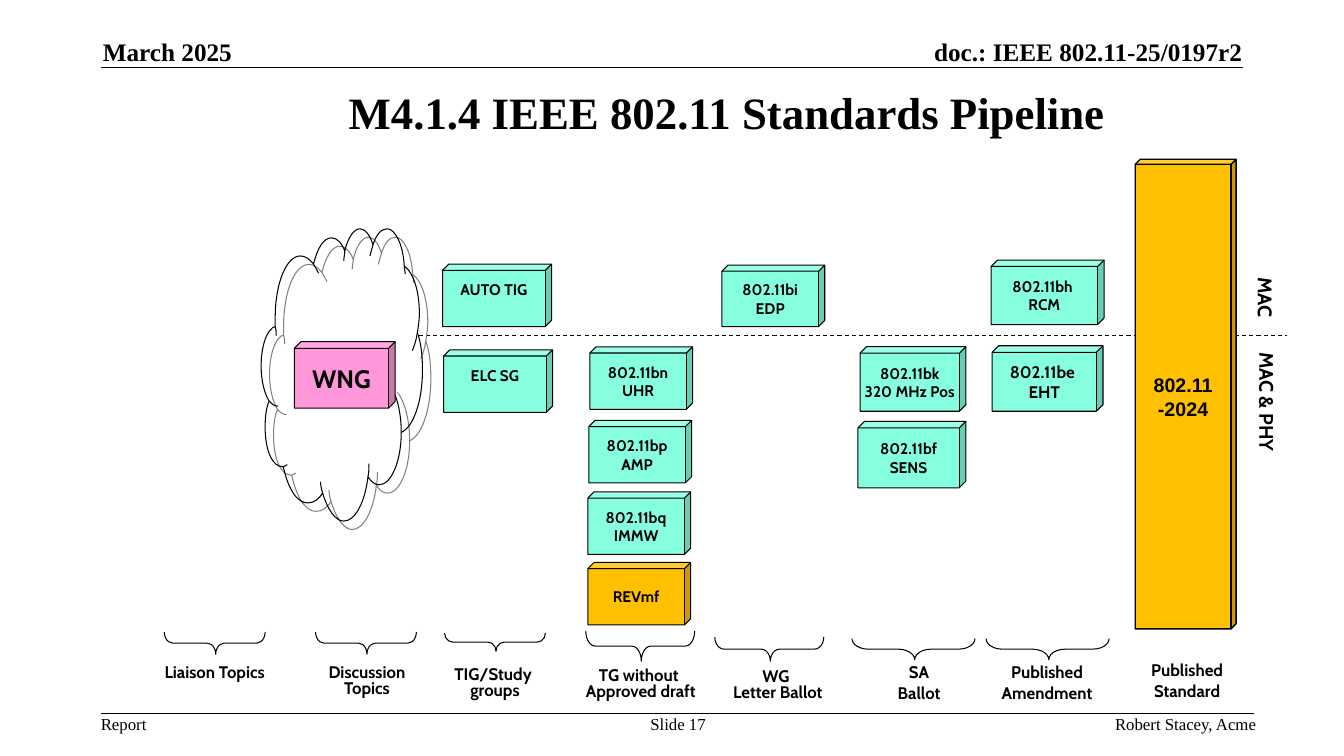
from dataclasses import dataclass

from lxml.etree import SubElement
from pptx import Presentation
from pptx.dml.color import RGBColor
from pptx.enum.dml import MSO_LINE
from pptx.enum.shapes import MSO_CONNECTOR, MSO_SHAPE
from pptx.enum.text import MSO_ANCHOR as Anchor, MSO_AUTO_SIZE, PP_ALIGN as Align
from pptx.oxml.ns import qn
from pptx.util import Inches, Pt


@dataclass(frozen=True)
class Theme:
    ink: RGBColor = RGBColor(0, 0, 0)
    paper: RGBColor = RGBColor(0xFF, 0xFF, 0xFF)
    shade: str = "808080"
    group: RGBColor = RGBColor(0x85, 0xFF, 0xE0)
    standard: RGBColor = RGBColor(0xFF, 0xC0, 0x00)
    discussion: RGBColor = RGBColor(0xFF, 0x97, 0xDA)
    page_font: str = "Times New Roman"
    diagram_font: str = "Cabin"
    standard_font: str = "Arial"
    title: int = 32
    header: int = 18
    footer: int = 12
    label: int = 12
    box: int = 11
    band: int = 14
    thin: float = 0.75
    rule: float = 1


THEME = Theme()

# text, place, size, bold, alignment, anchor
PAGE_TEXTS = [
    ("March 2025", (1.02, 0.36, 1.29, 0.3), THEME.header, True, Align.LEFT, Anchor.BOTTOM),
    ("doc.: IEEE 802.11-25/0197r2", (8.6, 0.36, 3.72, 0.3), THEME.header, True, Align.RIGHT, Anchor.BOTTOM),
    ("M4.1.4 IEEE 802.11 Standards Pipeline", (2.42, 0.75, 9.58, 0.71), THEME.title, True, Align.CENTER, Anchor.MIDDLE),
    ("Report", (1, 7.08, 0.46, 0.2), THEME.footer, False, Align.LEFT, Anchor.TOP),
    ("Slide 17", (6.43, 7.08, 0.59, 0.2), THEME.footer, False, Align.CENTER, Anchor.TOP),
    ("Robert Stacey, Acme", (10.09, 7.08, 2.37, 0.2), THEME.footer, False, Align.RIGHT, Anchor.TOP),
]

# lines, place, line spacing
STAGE_LABELS = [
    (["Liaison Topics"], (1.51, 6.55, 1.24, 0.42), 0.8),
    (["Discussion Topics"], (3.02, 6.55, 1.24, 0.42), 0.8),
    (["TIG/Study ", "groups"], (4.23, 6.57, 1.36, 0.42), 0.8),
    (["TG without ", "Approved draft"], (5.62, 6.58, 1.47, 0.42), 0.8),
    (["WG ", "Letter Ballot"], (7.09, 6.59, 1.25, 0.42), 0.8),
    (["SA", "Ballot"], (8.77, 6.52, 0.69, 0.5), 1),
]
PUBLISHED_LABELS = [
    (["Published", "Amendment"], (9.77, 6.52, 1.23, 0.5)),
    (["Published", "Standard"], (11.26, 6.5, 1.03, 0.5)),
]

# centre x, centre y, span, depth, curl
STAGE_BRACES = [
    (2.13, 6.38, 1, 0.22, 0.38),
    (3.63, 6.38, 1, 0.22, 0.38),
    (4.91, 6.37, 1, 0.18, 0.45),
    (6.35, 6.41, 1.08, 0.3, 0.31),
    (7.63, 6.44, 1.08, 0.24, 0.38),
    (9.06, 6.44, 1.22, 0.21, 0.77),
    (10.39, 6.44, 1.22, 0.21, 0.77),
]

# paragraphs, place, size; a line feed breaks the line within a paragraph
GROUPS = [
    (["802.11be \nEHT"], (9.84, 3.43, 1.1, 0.65), THEME.label),
    (["802.11bi", "EDP"], (7.16, 2.63, 1.02, 0.61), THEME.box),
    (["802.11bf\nSENS"], (8.51, 4.18, 1.07, 0.66), THEME.box),
    (["802.11bn", "UHR"], (5.85, 3.44, 1.02, 0.62), THEME.box),
    (["802.11bp", "AMP"], (5.84, 4.17, 1.02, 0.62), THEME.box),
    (["802.11bq", "IMMW"], (5.83, 4.88, 1.02, 0.62), THEME.box),
    (["802.11bk", "320 MHz Pos"], (8.53, 3.44, 1.05, 0.64), THEME.box),
    (["802.11bh ", "RCM"], (9.83, 2.58, 1.12, 0.64), THEME.box),
]
STUDY_GROUPS = [("AUTO TIG", 4.39, 2.62), ("ELC SG", 4.4, 3.47)]

CLOUD_START = (2.73, 3.24)
# Bezier curves round the rim: two controls and an end
CLOUD_RIM = [
    ((2.65, 3.26), (2.59, 3.43), (2.59, 3.63)), ((2.59, 3.77), (2.62, 3.9), (2.67, 3.98)),
    ((2.64, 4.04), (2.63, 4.14), (2.63, 4.24)), ((2.63, 4.46), (2.7, 4.64), (2.81, 4.63)),
    ((2.86, 4.86), (2.95, 4.99), (3.05, 4.99)), ((3.11, 4.99), (3.16, 4.96), (3.2, 4.89)),
    ((3.25, 5.06), (3.33, 5.17), (3.41, 5.17)), ((3.52, 5.17), (3.62, 4.99), (3.65, 4.73)),
    ((3.68, 4.78), (3.72, 4.81), (3.76, 4.81)), ((3.88, 4.81), (3.98, 4.58), (3.98, 4.29)),
    ((4.1, 4.24), (4.19, 3.98), (4.19, 3.68)), ((4.19, 3.54), (4.18, 3.41), (4.14, 3.3)),
    ((4.15, 3.24), (4.16, 3.17), (4.16, 3.11)), ((4.16, 2.89), (4.1, 2.7), (4.01, 2.64)),
    ((4, 2.43), (3.92, 2.27), (3.84, 2.27)), ((3.78, 2.27), (3.73, 2.33), (3.7, 2.43)),
    ((3.67, 2.33), (3.62, 2.27), (3.57, 2.27)), ((3.51, 2.27), (3.45, 2.36), (3.42, 2.49)),
    ((3.39, 2.41), (3.34, 2.36), (3.29, 2.36)), ((3.21, 2.36), (3.15, 2.46), (3.11, 2.62)),
    ((3.07, 2.57), (3.03, 2.54), (2.98, 2.54)), ((2.84, 2.54), (2.73, 2.81), (2.73, 3.15)),
    ((2.73, 3.18), (2.73, 3.21), (2.73, 3.24)),
]
# short curves from the rim inwards: start, two controls, end
CLOUD_FOLDS = [
    ((2.67, 3.98), (2.7, 4.01), (2.72, 4.03), (2.76, 4.03)),
    ((2.81, 4.63), (2.82, 4.63), (2.83, 4.62), (2.85, 4.61)),
    ((3.18, 4.78), (3.18, 4.82), (3.19, 4.86), (3.2, 4.89)),
    ((3.65, 4.73), (3.66, 4.69), (3.66, 4.64), (3.66, 4.6)),
    ((3.98, 4.29), (3.98, 4.08), (3.93, 3.9), (3.86, 3.81)),
    ((4.09, 3.48), (4.11, 3.43), (4.13, 3.37), (4.14, 3.3)),
    ((4.02, 2.72), (4.02, 2.69), (4.01, 2.66), (4.01, 2.64)),
    ((3.7, 2.43), (3.69, 2.46), (3.68, 2.5), (3.67, 2.54)),
    ((3.42, 2.49), (3.42, 2.52), (3.41, 2.56), (3.41, 2.59)),
    ((3.16, 2.71), (3.14, 2.68), (3.13, 2.65), (3.11, 2.62)),
    ((2.73, 3.24), (2.74, 3.27), (2.74, 3.3), (2.74, 3.33)),
]


def write(frame, lines, size, font=THEME.diagram_font, bold=True, align=Align.CENTER, spacing=1):
    for index, line in enumerate(lines):
        paragraph = frame.paragraphs[0] if index == 0 else frame.add_paragraph()
        paragraph.alignment = align
        paragraph.line_spacing = spacing
        for part_index, part in enumerate(line.split("\n")):
            if part_index:
                paragraph.add_line_break()
            run = paragraph.add_run()
            run.text = part
            run.font.size, run.font.name, run.font.bold = Pt(size), font, bold
            run.font.color.rgb = THEME.ink


def text_box(slide, place, wrap=False, anchor=Anchor.TOP, rotation=0):
    box = slide.shapes.add_textbox(*map(Inches, place))
    box.rotation = rotation
    frame = box.text_frame
    frame.word_wrap, frame.vertical_anchor = wrap, anchor
    frame.auto_size = MSO_AUTO_SIZE.NONE
    return frame


def page_text(slide, text, place, size, bold, align, anchor):
    frame = text_box(slide, place, anchor=anchor)
    frame.margin_left = frame.margin_right = frame.margin_top = frame.margin_bottom = 0
    write(frame, [text], size, THEME.page_font, bold, align)


def rule(slide, left, right, y, width, dash=None):
    line = slide.shapes.add_connector(MSO_CONNECTOR.STRAIGHT, *map(Inches, (left, y, right, y)))
    line.line.color.rgb, line.line.width = THEME.ink, Pt(width)
    if dash:
        line.line.dash_style = dash
    SubElement(line._element.spPr, qn("a:effectLst"))


def outline(shape, width=THEME.thin):
    shape.line.color.rgb, shape.line.width = THEME.ink, Pt(width)
    shape.shadow.inherit = False


def block(slide, preset, place, fill):
    shape = slide.shapes.add_shape(preset, *map(Inches, place))
    shape.fill.solid()
    shape.fill.fore_color.rgb = fill
    shape.text_frame.word_wrap = False
    return shape


def cube(slide, lines, place, fill, size=THEME.box, font=THEME.diagram_font,
         depth=0.1, line_width=THEME.thin, bottom_margin=0.05):
    shape = block(slide, MSO_SHAPE.CUBE, place, fill)
    shape.adjustments[0] = depth
    outline(shape, line_width)
    shape.text_frame.vertical_anchor = Anchor.MIDDLE
    shape.text_frame.margin_bottom = Inches(bottom_margin)
    write(shape.text_frame, lines, size, font)


def published_label(slide, lines, place):
    shape = block(slide, MSO_SHAPE.RECTANGLE, place, THEME.paper)
    shape.line.fill.background()
    shape.shadow.inherit = False
    shape.text_frame.vertical_anchor = Anchor.TOP
    write(shape.text_frame, lines, THEME.label)


def stage_brace(slide, x, y, span, depth, curl):
    place = (x - depth / 2, y - span / 2, depth, span)
    brace = slide.shapes.add_shape(MSO_SHAPE.LEFT_BRACE, *map(Inches, place))
    brace.adjustments[0], brace.adjustments[1] = curl, 0.51
    brace.rotation = 270
    brace.fill.background()
    outline(brace)


def bend(shape, curves):
    """Turn each straight segment of a freeform into its Bezier curve."""
    for segment, curve in zip(list(shape._element.iter(qn("a:lnTo"))), curves):
        segment.tag = qn("a:cubicBezTo")
        segment.remove(segment[0])
        for x, y in curve:
            SubElement(segment, qn("a:pt"), x=str(Inches(x) - shape.left), y=str(Inches(y) - shape.top))


def cloud(slide):
    builder = slide.shapes.build_freeform(*map(Inches, CLOUD_START))
    builder.add_line_segments([tuple(map(Inches, curve[-1])) for curve in CLOUD_RIM], close=True)
    for fold in CLOUD_FOLDS:
        builder.move_to(*map(Inches, fold[0]))
        builder.add_line_segments([tuple(map(Inches, fold[-1]))], close=False)
    shape = builder.convert_to_shape()
    bend(shape, CLOUD_RIM + [fold[1:] for fold in CLOUD_FOLDS])
    shape.fill.background()
    outline(shape)
    effects = shape._element.spPr.find(qn("a:effectLst"))
    shadow = SubElement(effects, qn("a:outerShdw"), dist=str(Pt(8.5)), dir="2700000",
                        algn="ctr", rotWithShape="0")
    SubElement(shadow, qn("a:srgbClr"), val=THEME.shade)


def main():
    deck = Presentation()
    deck.slide_width, deck.slide_height = Inches(13.33), Inches(7.5)
    slide = deck.slides.add_slide(deck.slide_layouts[6])
    for text in PAGE_TEXTS:
        page_text(slide, *text)
    rule(slide, 1, 12.33, 0.67, THEME.rule)
    rule(slide, 1, 12.44, 7.08, THEME.rule)
    rule(slide, 4.15, 12.76, 3.33, THEME.thin, MSO_LINE.DASH)
    for band, place in (("MAC", (12.23, 2.8, 0.64, 0.34)), ("MAC & PHY", (11.9, 3.89, 1.33, 0.34))):
        write(text_box(slide, place, rotation=90), [band], THEME.band, align=Align.LEFT)
    for lines, place, spacing in STAGE_LABELS:
        write(text_box(slide, place, wrap=len(lines) == 1), lines, THEME.label, spacing=spacing)
    for label in PUBLISHED_LABELS:
        published_label(slide, *label)
    for brace in STAGE_BRACES:
        stage_brace(slide, *brace)
    cloud(slide)
    cube(slide, ["WNG"], (2.92, 3.39, 1, 0.66), THEME.discussion, THEME.header)
    cube(slide, ["802.11", "-2024"], (11.26, 1.58, 1, 4.66), THEME.standard, THEME.band,
         THEME.standard_font, depth=0.05, line_width=THEME.rule)
    for group in GROUPS:
        lines, place, size = group
        cube(slide, lines, place, THEME.group, size)
    for name, left, top in STUDY_GROUPS:
        cube(slide, [name], (left, top, 1.08, 0.62), THEME.group, bottom_margin=0.23)
    cube(slide, ["REVmf"], (5.83, 5.58, 1.02, 0.62), THEME.standard)
    deck.save("out.pptx")


if __name__ == "__main__":
    main()
